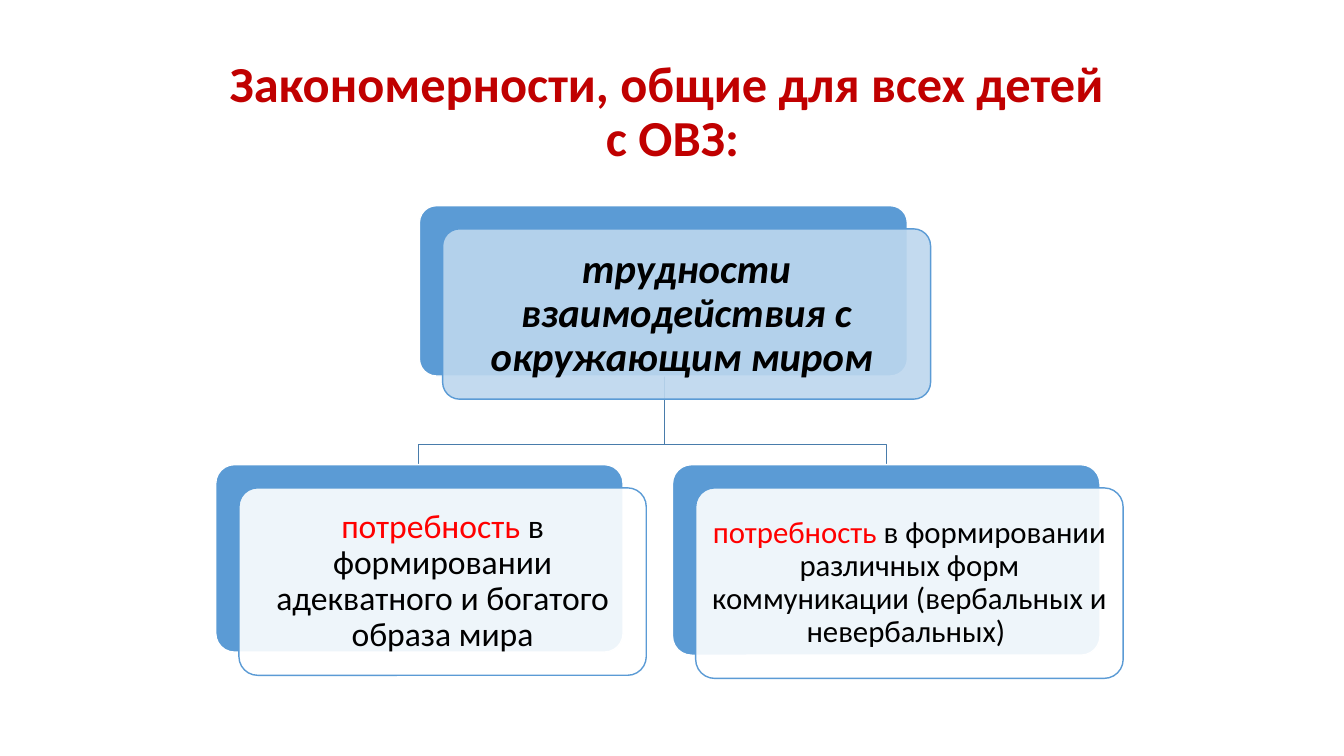
from dataclasses import dataclass

from lxml import etree
from pptx import Presentation
from pptx.dml.color import RGBColor
from pptx.enum import shapes, text
from pptx.oxml import ns
from pptx.util import Inches, Pt


@dataclass(frozen=True)
class Theme:
    font: str = "Calibri"
    title: str = "C00000"
    accent: str = "FF0000"
    ink: str = "000000"
    back: str = "5B9BD5"
    branch: str = "497CAB"
    light: str = "BDD7EE"
    white: str = "FFFFFF"
    title_size: int = 36
    root_size: int = 29
    left_size: int = 24
    right_size: int = 22


theme = Theme()


def add_text(paragraph, wording, size, color, bold=False, italic=False):
    run = paragraph.add_run()
    run.text = wording
    run.font.name = theme.font
    run.font.size = Pt(size)
    run.font.bold = bold
    run.font.italic = italic
    run.font.color.rgb = RGBColor.from_string(color)


def add_card(left, top, width, height, fill, line):
    card = slide.shapes.add_shape(
        shapes.MSO_SHAPE.ROUNDED_RECTANGLE,
        Inches(left), Inches(top), Inches(width), Inches(height))
    card.adjustments[0] = 0.1
    card.shadow.inherit = False
    card.fill.solid()
    card.fill.fore_color.rgb = RGBColor.from_string(fill)
    card.line.color.rgb = RGBColor.from_string(line)
    card.line.width = Pt(1)
    return card


presentation = Presentation()
presentation.slide_width = Inches(13.33)
presentation.slide_height = Inches(7.5)
slide = presentation.slides.add_slide(presentation.slide_layouts[5])

# Title
title = slide.shapes.title
title.left, title.top = Inches(0.92), Inches(0.4)
title.width, title.height = Inches(11.5), Inches(1.45)
title.text_frame.auto_size = text.MSO_AUTO_SIZE.NONE
title.text_frame.vertical_anchor = text.MSO_ANCHOR.MIDDLE
heading = title.text_frame.paragraphs[0]
heading.alignment = text.PP_ALIGN.CENTER
heading.line_spacing = 0.9
add_text(heading, "Закономерности, общие для всех детей ",
         theme.title_size, theme.title, bold=True)
heading.add_line_break()
add_text(heading, "с ОВЗ:", theme.title_size, theme.title, bold=True)

# Branches from the root card to the two needs
root_x, root_bottom, fork_y, needs_top = 6.59, 3.73, 4.41, 4.61
for need_x in (8.79, 4.15):
    outline = slide.shapes.build_freeform(
        Inches(root_x), Inches(root_bottom), scale=1.0)
    outline.add_line_segments(
        [(Inches(x), Inches(y)) for x, y in
         ((root_x, fork_y), (need_x, fork_y), (need_x, needs_top))],
        close=False)
    branch = outline.convert_to_shape()
    branch.shadow.inherit = False
    branch.fill.background()
    branch.line.color.rgb = RGBColor.from_string(theme.branch)
    branch.line.width = Pt(1)

# Each card: left, top, width, height, front fill, margin, size, emphasis, runs
cards = [
    (4.16, 2.04, 4.84, 1.69, theme.light, 0.17, theme.root_size, True,
     [("трудности взаимодействия с окружающим миром ", theme.ink)]),
    (2.14, needs_top, 4.04, 1.86, theme.white, 0.15, theme.left_size, False,
     [("потребность", theme.accent),
      (" в формировании адекватного и богатого образа мира", theme.ink)]),
    (6.67, needs_top, 4.24, 1.89, theme.white, 0.14, theme.right_size, False,
     [("потребность", theme.accent),
      (" в формировании различных форм коммуникации "
       "(вербальных и невербальных) ", theme.ink)]),
]
offset = 0.23
for left, top, width, height, fill, margin, size, emphasis, wording in cards:
    add_card(left, top, width, height, theme.back, theme.white)
    front = add_card(left + offset, top + offset, width, height,
                     fill, theme.back)
    front_color = front.fill._xPr.find(".//" + ns.qn("a:srgbClr"))
    etree.SubElement(front_color, ns.qn("a:alpha"), val="90000")

    frame = front.text_frame
    frame.word_wrap = True
    frame.vertical_anchor = text.MSO_ANCHOR.MIDDLE
    # Rounded corners already inset the text by 0.29 of the corner radius
    inset = Inches(margin - 0.029 * height)
    frame.margin_left = frame.margin_right = inset
    frame.margin_top = frame.margin_bottom = inset
    paragraph = frame.paragraphs[0]
    paragraph.alignment = text.PP_ALIGN.CENTER
    paragraph.line_spacing = 0.9
    for words, color in wording:
        add_text(paragraph, words, size, color, emphasis, emphasis)

presentation.save("out.pptx")
